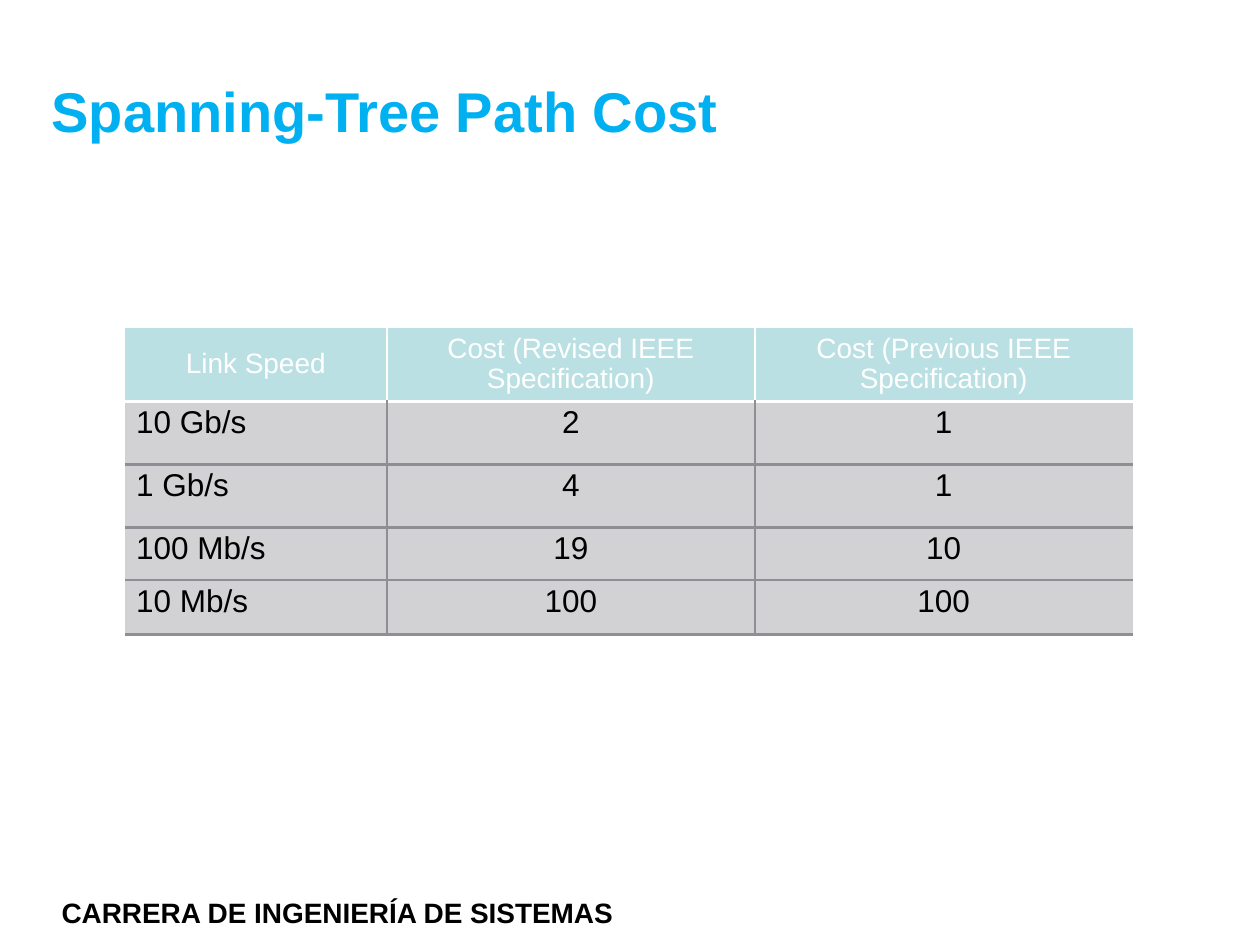
from lxml.etree import SubElement
from pptx import Presentation
from pptx.dml.color import RGBColor
from pptx.enum.text import MSO_ANCHOR, MSO_AUTO_SIZE, PP_ALIGN
from pptx.oxml.ns import qn
from pptx.util import Inches, Pt

BLUE = RGBColor(0x00, 0xB0, 0xF0)
BLACK = RGBColor(0x00, 0x00, 0x00)
WHITE = RGBColor(0xFF, 0xFF, 0xFF)
HEADER_FILL = RGBColor(0xBB, 0xE0, 0xE3)
BODY_FILL = RGBColor(0xD2, 0xD2, 0xD4)
GRID = RGBColor(0x8E, 0x8E, 0x95)

COLUMNS = [2.08, 2.92, 3]
ROW_HEIGHTS = [0.55, 0.5, 0.5, 0.42, 0.43]
COSTS = [
    ["Link Speed", "Cost (Revised IEEE Specification)",
     "Cost (Previous IEEE Specification)"],
    ["10 Gb/s", "2", "1"],
    ["1 Gb/s", "4", "1"],
    ["100 Mb/s", "19", "10"],
    ["10 Mb/s", "100", "100"],
]


class SlideBuilder:
    font = "Arial"
    line_width = Pt(1.5)

    def __init__(self, slide):
        self.s = slide

    def add_text(self, tf, text, size, color, bold=False, align=PP_ALIGN.LEFT):
        p = tf.paragraphs[0]
        p.alignment = align
        r = p.add_run()
        r.text = text
        r.font.name = self.font
        r.font.size = Pt(size)
        r.font.bold = bold
        r.font.color.rgb = color
        return p

    def title(self, text, left, top, width, height):
        sp = self.s.shapes.title
        sp.left, sp.top = Inches(left), Inches(top)
        sp.width, sp.height = Inches(width), Inches(height)
        sp.text_frame.auto_size = MSO_AUTO_SIZE.SHAPE_TO_FIT_TEXT
        self.add_text(sp.text_frame, text, 32, BLUE, bold=True)

    def footer(self, text, left, top, width, height):
        sp = self.s.shapes.add_textbox(
            Inches(left), Inches(top), Inches(width), Inches(height))
        tf = sp.text_frame
        tf.word_wrap = True
        tf.auto_size = MSO_AUTO_SIZE.SHAPE_TO_FIT_TEXT
        self.add_text(tf, text, 16, BLACK, bold=True)

    def border(self, cell, side, color):
        """Draw one cell edge (L, R, T or B); None hides it."""
        ln = SubElement(cell._tc.get_or_add_tcPr(), qn(f"a:ln{side}"),
                        w=str(self.line_width))
        if color is None:
            SubElement(ln, qn("a:noFill"))
        else:
            fill = SubElement(ln, qn("a:solidFill"))
            SubElement(fill, qn("a:srgbClr"), val=str(color))

    def cell(self, cell, text, row, col, last_col):
        header = row == 0
        line = WHITE if header else GRID
        self.border(cell, "L", line if col > 0 else None)
        self.border(cell, "R", line if col < last_col else None)
        self.border(cell, "T", (None, WHITE, GRID)[min(row, 2)])
        self.border(cell, "B", line)
        cell.fill.solid()
        cell.fill.fore_color.rgb = HEADER_FILL if header else BODY_FILL
        cell.vertical_anchor = MSO_ANCHOR.MIDDLE if header else MSO_ANCHOR.TOP
        side_margin = 0.06 if header and col == last_col else 0.09
        cell.margin_left = cell.margin_right = Inches(side_margin)
        cell.margin_top = cell.margin_bottom = Inches(0.04)
        align = PP_ALIGN.CENTER if header or col > 0 else PP_ALIGN.LEFT
        p = self.add_text(cell.text_frame, text, 16 if header else 18,
                          WHITE if header else BLACK, align=align)
        p.line_spacing = 0.95

    def table(self, rows, left, top, widths, heights):
        table = self.s.shapes.add_table(
            len(rows), len(widths), Inches(left), Inches(top),
            Inches(sum(widths)), Inches(sum(heights))).table
        for column, width in zip(table.columns, widths):
            column.width = Inches(width)
        for row, height in zip(table.rows, heights):
            row.height = Inches(height)
        for i, texts in enumerate(rows):
            for j, text in enumerate(texts):
                self.cell(table.cell(i, j), text, i, j, len(widths) - 1)


def main():
    prs = Presentation()
    prs.slide_width, prs.slide_height = Inches(10), Inches(7.5)
    title_only = prs.slide_layouts[5]
    builder = SlideBuilder(prs.slides.add_slide(title_only))
    builder.footer("CARRERA DE INGENIERÍA DE SISTEMAS", 0.39, 7.06, 5.08, 0.37)
    builder.table(COSTS, 0.99, 2.6, COLUMNS, ROW_HEIGHTS)
    builder.title("Spanning-Tree Path Cost", 0.31, 0.55, 7.19, 0.64)
    prs.save("out.pptx")


if __name__ == "__main__":
    main()
